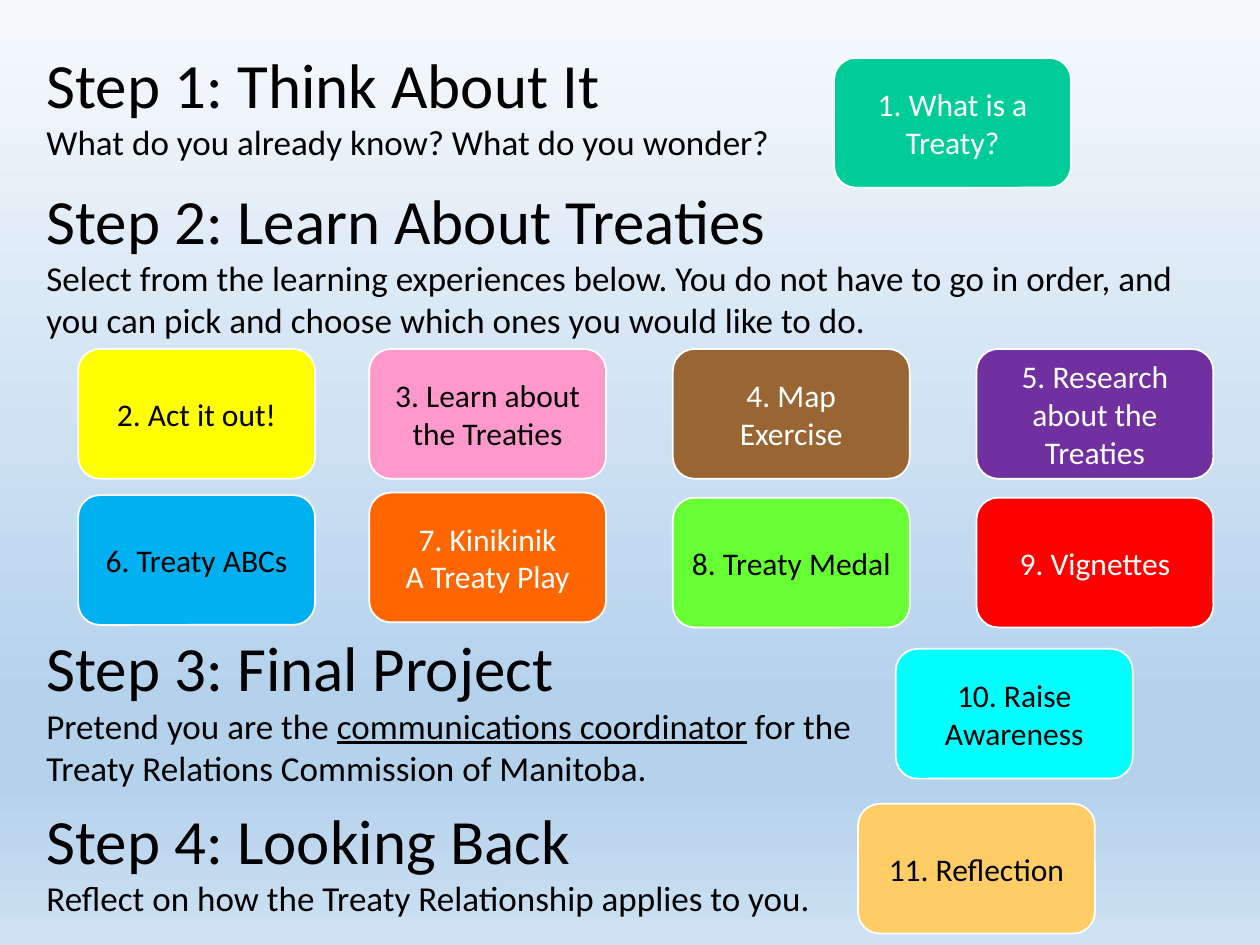
import copy

import pptx
import pptx.dml.color
import pptx.enum.shapes
import pptx.enum.text
import pptx.util

RGBColor = pptx.dml.color.RGBColor
Inches = pptx.util.Inches
Pt = pptx.util.Pt

BLACK = RGBColor(0x00, 0x00, 0x00)
WHITE = RGBColor(0xFF, 0xFF, 0xFF)
GREEN = RGBColor(0x00, 0xCC, 0x99)
YELLOW = RGBColor(0xFF, 0xFF, 0x00)
PINK = RGBColor(0xFF, 0x99, 0xCC)
BROWN = RGBColor(0x99, 0x66, 0x33)
PURPLE = RGBColor(0x70, 0x30, 0xA0)
BLUE = RGBColor(0x00, 0xB0, 0xF0)
ORANGE = RGBColor(0xFF, 0x66, 0x00)
LIME = RGBColor(0x66, 0xFF, 0x33)
RED = RGBColor(0xFF, 0x00, 0x00)
CYAN = RGBColor(0x00, 0xFF, 0xFF)
SAND = RGBColor(0xFF, 0xCC, 0x66)

SKY = [
    (0, RGBColor(0xF7, 0xFA, 0xFD)),
    (0.74, RGBColor(0xB5, 0xD2, 0xEC)),
    (0.83, RGBColor(0xB5, 0xD2, 0xEC)),
    (1, RGBColor(0xCE, 0xE1, 0xF2)),
]

FONT = "Calibri"
MARGIN = 0.27
CARD_WIDTH, CARD_HEIGHT = 1.88, 1.03
COLUMNS = [0.62, 2.93, 5.34, 7.75]
FIRST_ROW = 2.77

STEPS = [
    ("Step 1: Think About It",
     [[("What do you already know? What do you wonder?", False)]],
     0.31, 6.35, 1.04),
    ("Step 2: Learn About Treaties",
     [[("Select from the learning experiences below. You do not have to go in order, "
        "and you can pick and choose which ones you would like to do.", False)]],
     1.39, 9.33, 1.38),
    ("Step 3: Final Project",
     [[("Pretend you are the ", False), ("communications coordinator", True),
       (" for the ", False)],
      [("Treaty Relations Commission of Manitoba.", False)]],
     4.94, 7.64, 1.38),
    ("Step 4: Looking Back",
     [[("Reflect on how the Treaty Relationship applies to you.", False)]],
     6.31, 7.13, 1.04),
]

ACTIVITIES = [
    ("1. What is a Treaty?", GREEN, WHITE, 6.62, 0.46),
    ("2. Act it out!", YELLOW, BLACK, COLUMNS[0], FIRST_ROW),
    ("3. Learn about the Treaties", PINK, BLACK, COLUMNS[1], FIRST_ROW),
    ("4. Map Exercise", BROWN, WHITE, COLUMNS[2], FIRST_ROW),
    ("5. Research\nabout the Treaties", PURPLE, WHITE, COLUMNS[3], FIRST_ROW),
    ("6. Treaty ABCs", BLUE, BLACK, COLUMNS[0], 3.93),
    ("7. Kinikinik\nA Treaty Play", ORANGE, WHITE, COLUMNS[1], 3.91),
    ("8. Treaty Medal", LIME, BLACK, COLUMNS[2], 3.95),
    ("9. Vignettes", RED, WHITE, COLUMNS[3], 3.95),
    ("10. Raise Awareness", CYAN, BLACK, 7.11, 5.15),
    ("11. Reflection", SAND, BLACK, 6.81, 6.38),
]


def set_font(paragraph, size, color):
    paragraph.font.name = FONT
    paragraph.font.size = Pt(size)
    paragraph.font.color.rgb = color


def paint_sky(slide):
    fill = slide.background.fill
    fill.gradient()
    fill.gradient_angle = 270
    first_stop = fill.gradient_stops[0]._gs
    for _ in SKY[2:]:
        first_stop.addnext(copy.deepcopy(first_stop))
    for stop, (position, color) in zip(fill.gradient_stops, SKY):
        stop.position = position
        stop.color.rgb = color


def add_step(slide, heading, lines, top, width, height):
    step = slide.shapes.add_textbox(
        Inches(MARGIN), Inches(top), Inches(width), Inches(height))
    frame = step.text_frame
    frame.word_wrap = True
    title = frame.paragraphs[0]
    title.text = heading
    set_font(title, 36, BLACK)
    instructions = frame.add_paragraph()
    set_font(instructions, 20, BLACK)
    for index, line in enumerate(lines):
        if index:
            instructions.add_line_break()
        for words, underlined in line:
            run = instructions.add_run()
            run.text = words
            if underlined:
                run.font.underline = True


def add_activity(slide, label, color, text_color, left, top):
    card = slide.shapes.add_shape(
        pptx.enum.shapes.MSO_SHAPE.ROUNDED_RECTANGLE,
        Inches(left), Inches(top), Inches(CARD_WIDTH), Inches(CARD_HEIGHT))
    card.shadow.inherit = False
    card.fill.solid()
    card.fill.fore_color.rgb = color
    card.line.color.rgb = WHITE
    card.line.width = Pt(1)
    frame = card.text_frame
    frame.word_wrap = True
    frame.vertical_anchor = pptx.enum.text.MSO_ANCHOR.MIDDLE
    caption = frame.paragraphs[0]
    caption.text = label
    caption.alignment = pptx.enum.text.PP_ALIGN.CENTER
    set_font(caption, 18, text_color)


def main():
    deck = pptx.Presentation()
    deck.slide_width, deck.slide_height = Inches(10), Inches(7.5)
    slide = deck.slides.add_slide(deck.slide_layouts[6])
    paint_sky(slide)
    for step in STEPS:
        add_step(slide, *step)
    for activity in ACTIVITIES:
        add_activity(slide, *activity)
    deck.save("out.pptx")


if __name__ == "__main__":
    main()
